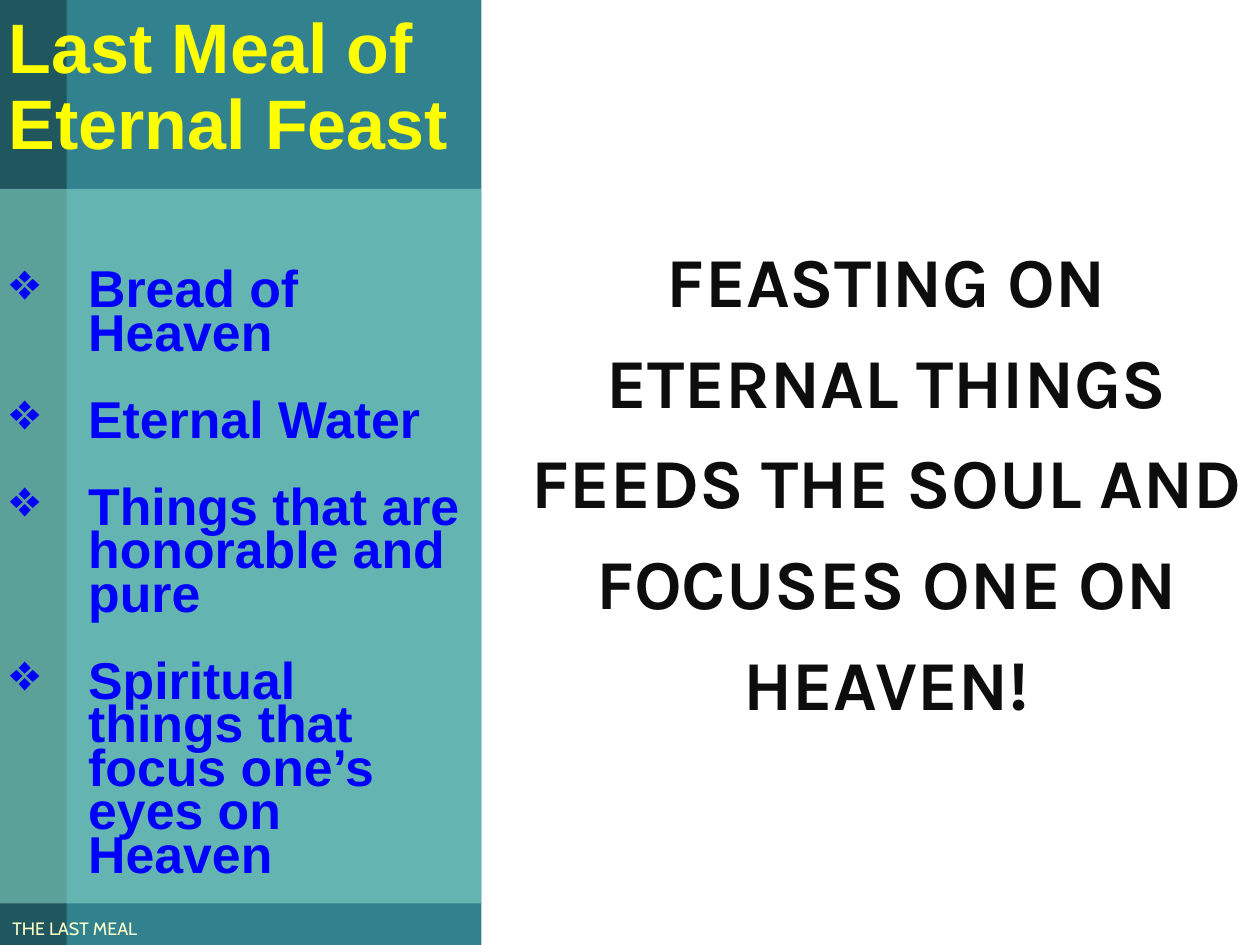
from dataclasses import dataclass

from lxml import etree
from pptx import Presentation
from pptx.dml.color import RGBColor
from pptx.enum.shapes import MSO_SHAPE
from pptx.enum.text import MSO_ANCHOR, PP_ALIGN
from pptx.oxml.ns import qn
from pptx.util import Inches, Pt

RECTANGLE = MSO_SHAPE.RECTANGLE
TOP = MSO_ANCHOR.TOP
MIDDLE = MSO_ANCHOR.MIDDLE
LEFT = PP_ALIGN.LEFT
CENTER = PP_ALIGN.CENTER

SIDEBAR_WIDTH = 3.82
SLIDE_WIDTH = 10
SLIDE_HEIGHT = 7.5


@dataclass(frozen=True)
class Box:
    """Position and size in inches."""
    left: float
    top: float
    width: float
    height: float


@dataclass(frozen=True)
class TextStyle:
    """Look of the paragraphs in one text frame."""
    font: str
    size: float
    color: str
    line_height: float
    bold: bool = True
    align: PP_ALIGN = LEFT
    space_before: float = 0
    space_after: float = 0
    indent: float = 0
    hanging: float = 0
    bullet: str = ""


def rgb(color: str) -> RGBColor:
    """Turn a hex string into a colour."""
    return RGBColor.from_string(color)


def add_panel(slide, box: Box, color: str, opacity: int = 100):
    """Draw a borderless filled rectangle."""
    panel = slide.shapes.add_shape(RECTANGLE, *map(Inches, (box.left, box.top, box.width, box.height)))
    panel.shadow.inherit = False
    panel.fill.solid()
    panel.fill.fore_color.rgb = rgb(color)
    panel.line.fill.background()
    if opacity < 100:
        fill_color = panel.fill._xPr.find(qn("a:solidFill"))[0]
        etree.SubElement(fill_color, qn("a:alpha"), val=str(opacity * 1000))
    return panel


def write_text(frame, lines: list[str], style: TextStyle, anchor: MSO_ANCHOR = MIDDLE,
               margins: tuple[float, float, float, float] = (0.1, 0.05, 0.1, 0.05)) -> None:
    """Fill a text frame with one paragraph per line."""
    frame.word_wrap = True
    frame.vertical_anchor = anchor
    frame.margin_left, frame.margin_top, frame.margin_right, frame.margin_bottom = map(Inches, margins)
    for index, line in enumerate(lines):
        paragraph = frame.paragraphs[0] if index == 0 else frame.add_paragraph()
        paragraph.text = line
        paragraph.alignment = style.align
        paragraph.line_spacing = Pt(style.line_height)
        paragraph.space_before = Pt(style.space_before if index else 0)
        paragraph.space_after = Pt(style.space_after)
        properties = paragraph._p.get_or_add_pPr()
        properties.set("marL", str(Inches(style.indent)))
        properties.set("indent", str(Inches(-style.hanging)))
        if style.bullet:
            etree.SubElement(properties, qn("a:buChar"), char=style.bullet)
        paragraph.font.name = style.font
        paragraph.font.size = Pt(style.size)
        paragraph.font.bold = style.bold
        paragraph.font.color.rgb = rgb(style.color)


def add_text(slide, box: Box, line: str, style: TextStyle, side_margin: float = 0.1) -> None:
    """Place a vertically centred text box."""
    text_box = slide.shapes.add_textbox(*map(Inches, (box.left, box.top, box.width, box.height)))
    write_text(text_box.text_frame, [line], style, margins=(side_margin, 0.05, side_margin, 0.05))


def main() -> None:
    """Build the slide and save it."""
    presentation = Presentation()
    presentation.slide_width = Inches(SLIDE_WIDTH)
    presentation.slide_height = Inches(SLIDE_HEIGHT)
    slide = presentation.slides.add_slide(presentation.slide_layouts[6])

    add_panel(slide, Box(0, 0, SIDEBAR_WIDTH, SLIDE_HEIGHT), "31828E")
    add_panel(slide, Box(0, 0, 0.53, SLIDE_HEIGHT), "20575E")

    footer_style = TextStyle("Cabin", 10.2, "FFFFCC", 11, bold=False, space_after=6)
    add_text(slide, Box(0, 7.25, 4.16, 0.25), "THE LAST MEAL", footer_style)

    title_style = TextStyle("Arial", 40, "FFFF00", 43.2)
    add_text(slide, Box(0, 0, SIDEBAR_WIDTH, 1.39), "Last Meal of Eternal Feast", title_style, 0.07)

    message_style = TextStyle("Karla", 40, "0D0D0D", 57.6, align=CENTER, space_after=6, indent=0.25)
    add_text(slide, Box(SIDEBAR_WIDTH, 0, SLIDE_WIDTH - SIDEBAR_WIDTH, SLIDE_HEIGHT),
             "FEASTING ON ETERNAL THINGS FEEDS THE SOUL AND FOCUSES ONE ON HEAVEN!", message_style)

    feast_style = TextStyle("Arial", 29.6, "0000FF", 24.86, space_before=24.86,
                            indent=0.62, hanging=0.62, bullet="❖")
    feast_items = [
        "Bread of Heaven",
        "Eternal Water",
        "Things that are honorable and pure",
        "Spiritual things that focus one’s eyes on Heaven",
    ]
    feast_panel = add_panel(slide, Box(0, 1.5, SIDEBAR_WIDTH, 5.67), "97E9D5", 50)
    write_text(feast_panel.text_frame, feast_items, feast_style, TOP, (0.08, 0.68, 0.15, 0.05))

    presentation.save("out.pptx")


if __name__ == "__main__":
    main()
